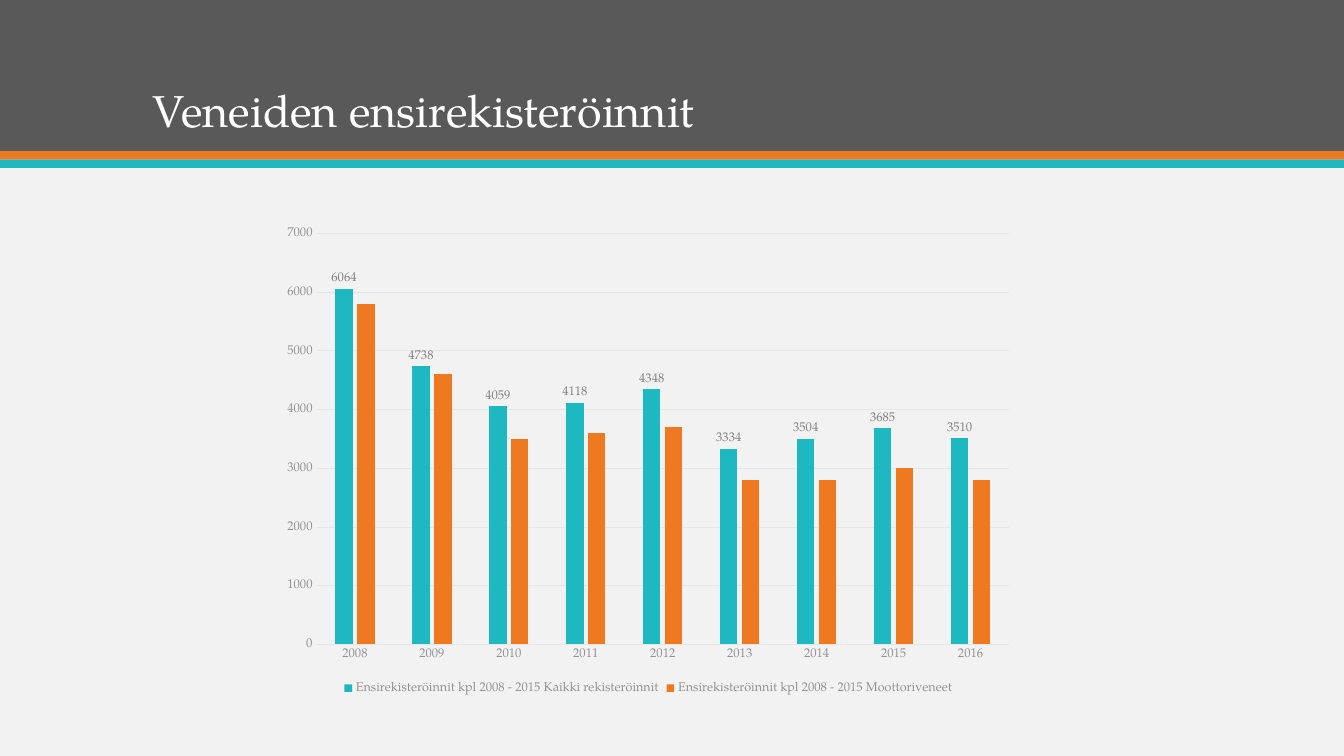
from dataclasses import dataclass

from pptx import Presentation
from pptx.chart import data as cd
from pptx.dml import color as dc
from pptx.enum import chart as ec, shapes as es, text as et
from pptx.util import Pt


@dataclass(frozen=True)
class Theme:
    font: str = "TeX Gyre Pagella"
    paper: str = "F2F2F2"
    dark: str = "595959"
    warm: str = "EF7920"
    cool: str = "1EB8C1"
    white: str = "FFFFFF"
    grid: str = "E6E6E6"
    soft: str = "939393"
    label: str = "828282"
    head: int = 32
    base: int = 10
    small: int = 9


THEME = Theme()
YEARS = [str(year) for year in range(2008, 2017)]
SERIES = [
    ("Ensirekisteröinnit kpl 2008 - 2015 Kaikki rekisteröinnit", THEME.cool,
     [6064, 4738, 4059, 4118, 4348, 3334, 3504, 3685, 3510]),
    ("Ensirekisteröinnit kpl 2008 - 2015 Moottoriveneet", THEME.warm,
     [5800, 4600, 3500, 3600, 3700, 2800, 2800, 3000, 2800]),
]


def rgb(code):
    return dc.RGBColor.from_string(code)


def apply(item, values):
    for name, value in values.items():
        setattr(item, name, value)


def paint(fill, code):
    fill.solid()
    fill.fore_color.rgb = rgb(code)


def style(font, size, code):
    apply(font, {"name": THEME.font, "size": Pt(size), "bold": False})
    font.color.rgb = rgb(code)


def rule(line, code):
    paint(line.fill, code)
    line.width = Pt(0.75)


def add_head(slide, box, words):
    left, top, width, height = box
    stripe = 6
    bands = [
        (top, height, THEME.dark),
        (top + height, stripe, THEME.warm),
        (top + height + stripe, stripe, THEME.cool),
    ]
    for y, tall, code in bands:
        band = slide.shapes.add_shape(
            es.MSO_SHAPE.RECTANGLE, Pt(left), Pt(y), Pt(width), Pt(tall))
        band.shadow.inherit = False
        paint(band.fill, code)
        band.line.fill.background()

    title = slide.shapes.title
    apply(title, {"left": Pt(left + 102), "top": Pt(top + 20),
                  "width": Pt(width - 204), "height": Pt(height - 26.5)})
    slide.shapes.element.append(title.element)
    frame = title.text_frame
    frame.text = words
    apply(frame, {"word_wrap": True, "auto_size": et.MSO_AUTO_SIZE.NONE,
                  "vertical_anchor": et.MSO_ANCHOR.BOTTOM})
    para = frame.paragraphs[0]
    apply(para, {"alignment": et.PP_ALIGN.LEFT, "line_spacing": 0.9})
    style(para.runs[0].font, THEME.head, THEME.white)


def add_bars(slide, box):
    data = cd.CategoryChartData(number_format="0")
    data.categories = YEARS
    for name, _, values in SERIES:
        data.add_series(name, values)
    chart = slide.shapes.add_chart(
        ec.XL_CHART_TYPE.COLUMN_CLUSTERED, *map(Pt, box), data).chart
    style(chart.font, THEME.base, THEME.dark)
    apply(chart, {"has_title": False, "has_legend": True})
    apply(chart.legend, {"position": ec.XL_LEGEND_POSITION.BOTTOM,
                         "include_in_layout": False})
    style(chart.legend.font, THEME.small, THEME.soft)

    years, scale = chart.category_axis, chart.value_axis
    for axis in (years, scale):
        apply(axis, {"major_tick_mark": ec.XL_TICK_MARK.NONE,
                     "minor_tick_mark": ec.XL_TICK_MARK.NONE})
        style(axis.tick_labels.font, THEME.small, THEME.soft)
    rule(years.format.line, THEME.grid)
    apply(scale, {"minimum_scale": 0, "maximum_scale": 7000,
                  "major_unit": 1000, "has_major_gridlines": True})
    scale.format.line.fill.background()
    rule(scale.major_gridlines.format.line, THEME.grid)

    plot = chart.plots[0]
    apply(plot, {"gap_width": 219, "overlap": -27,
                 "vary_by_categories": False})
    for bars, (_, code, _) in zip(plot.series, SERIES):
        bars.invert_if_negative = False
        paint(bars.format.fill, code)
    labels = plot.series[0].data_labels
    apply(labels, {"show_value": True,
                   "position": ec.XL_LABEL_POSITION.OUTSIDE_END})
    style(labels.font, THEME.small, THEME.label)


def main():
    deck = Presentation()
    apply(deck, {"slide_width": Pt(960), "slide_height": Pt(540)})
    slide = deck.slides.add_slide(deck.slide_layouts[5])
    paint(slide.background.fill, THEME.paper)
    add_head(slide, (0, 0, 960, 108), "Veneiden ensirekisteröinnit")
    add_bars(slide, (194.5, 155.5, 537, 343.5))
    deck.save("out.pptx")


if __name__ == "__main__":
    main()
